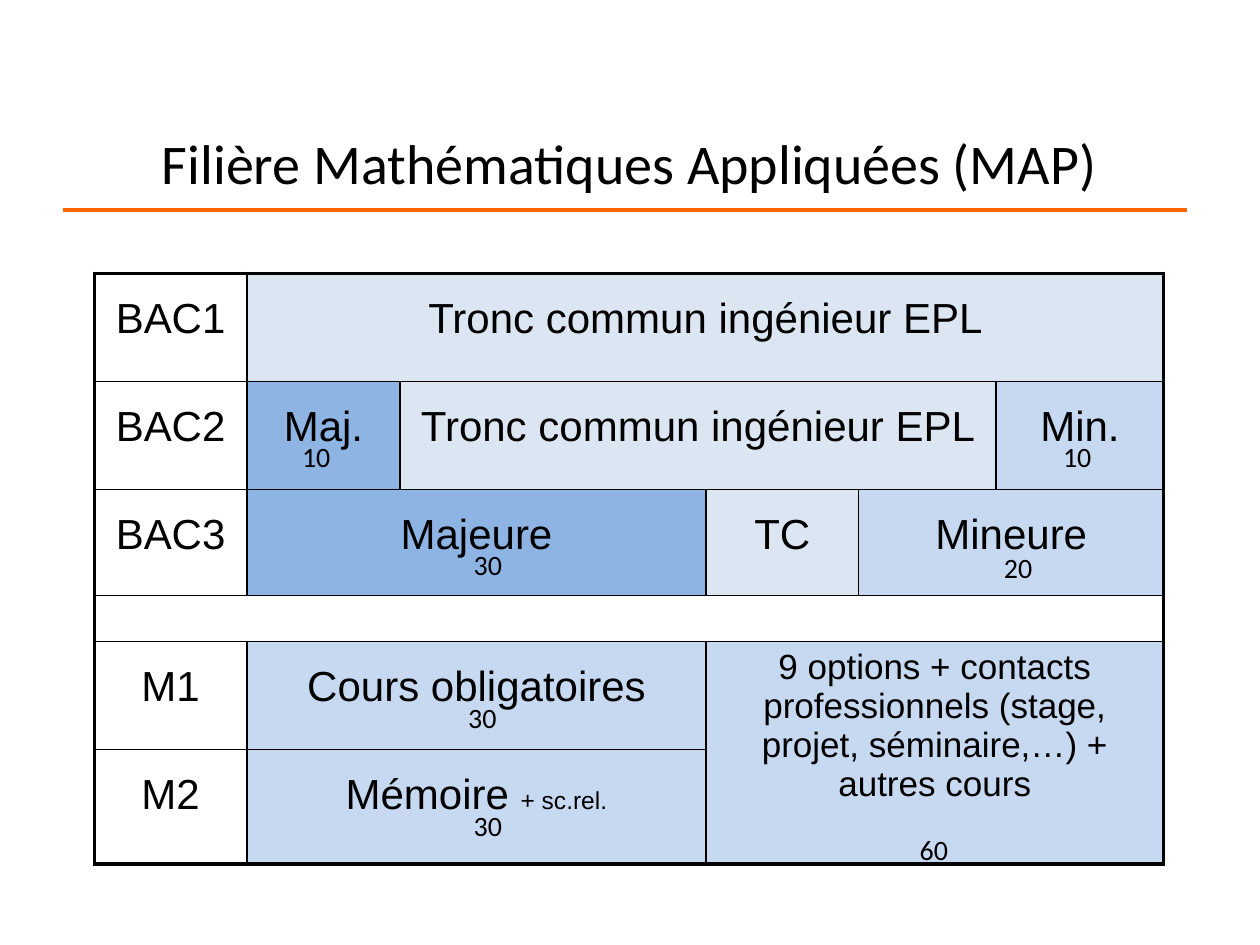
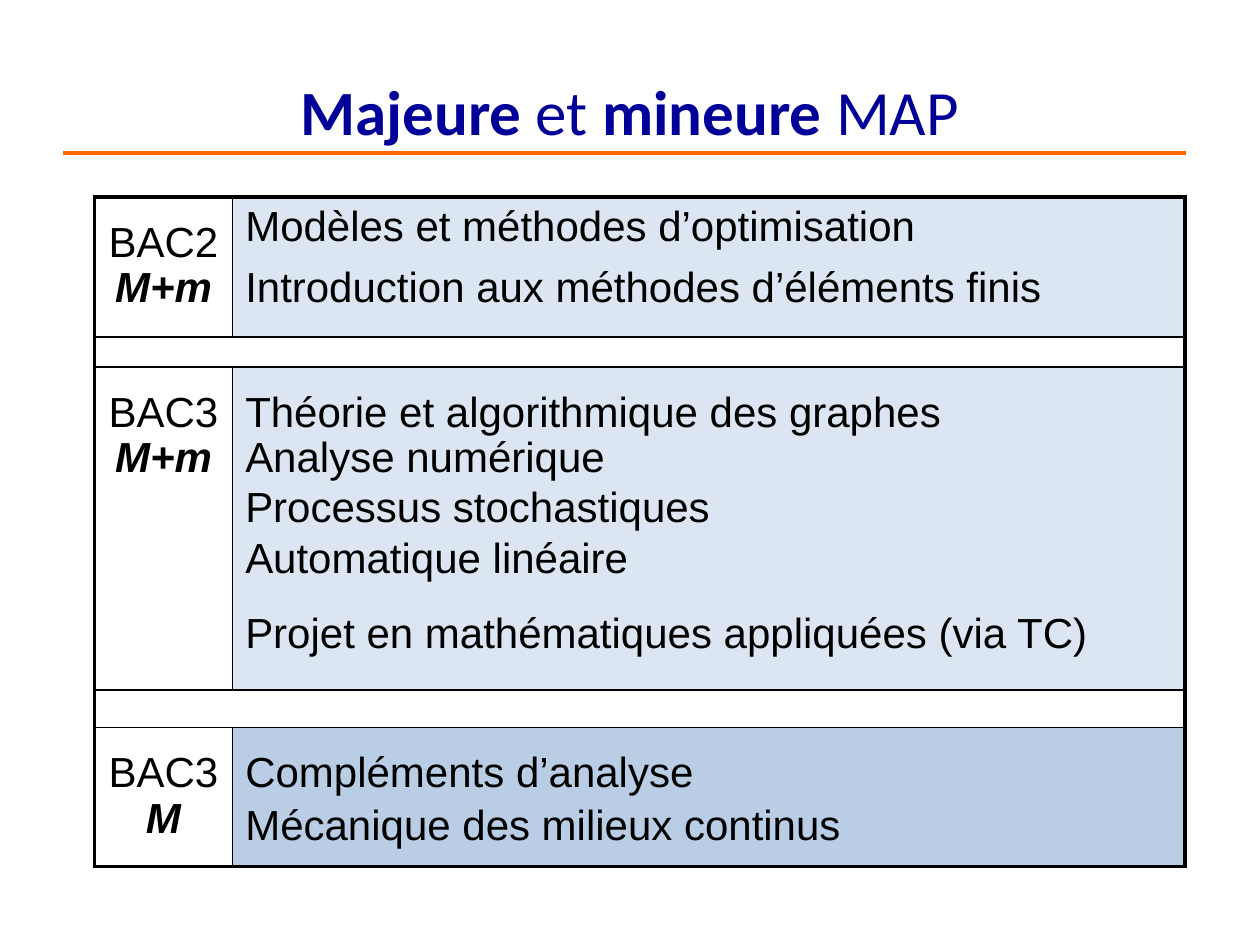
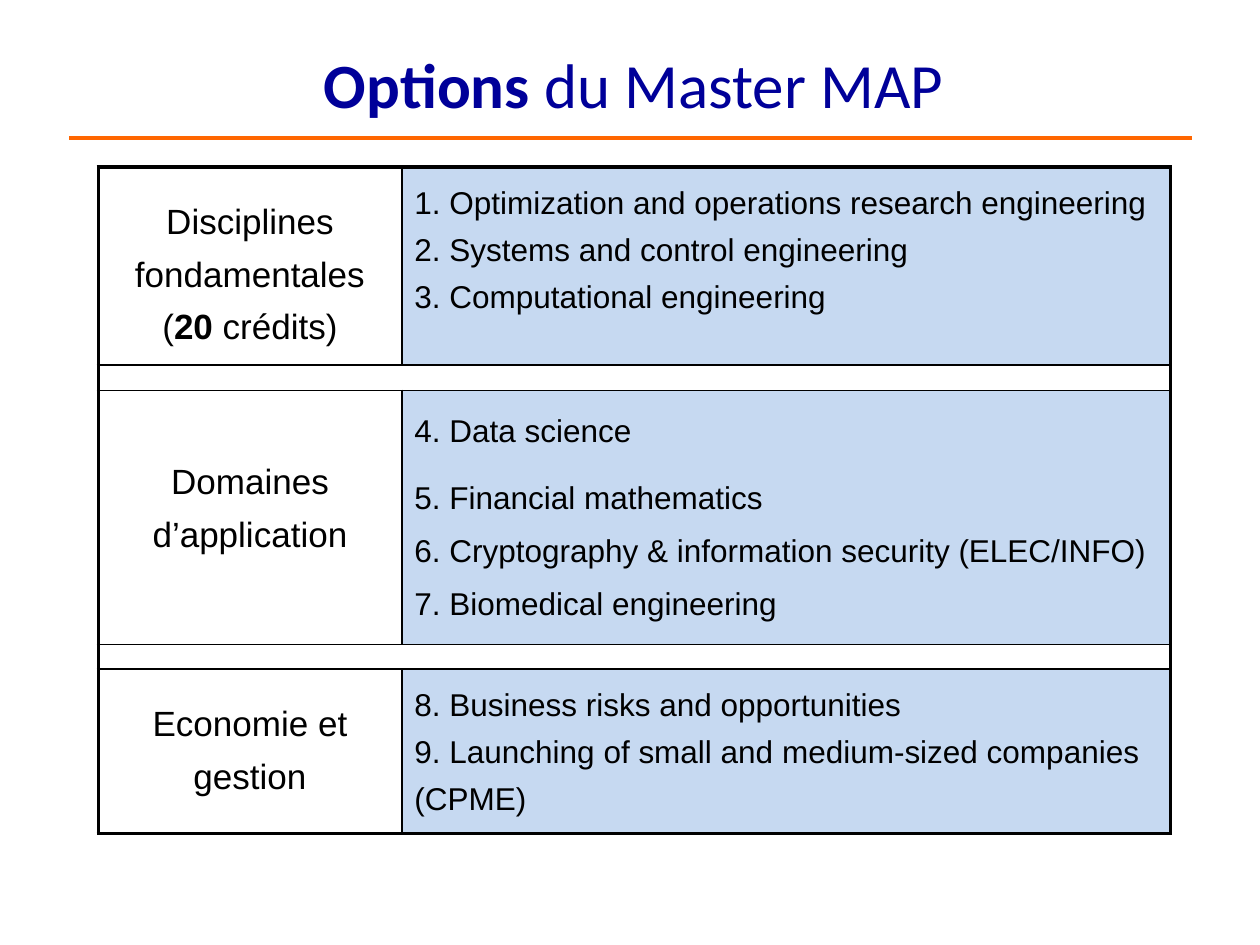
from lxml.etree import SubElement as Sub
from pptx import Presentation
from pptx.dml.color import RGBColor as Rgb
from pptx.enum.shapes import MSO_CONNECTOR as Link
from pptx.enum.text import MSO_ANCHOR as Anchor, PP_ALIGN as Align
from pptx.oxml.ns import qn
from pptx.util import Cm, Pt

BLACK, WHITE, NAVY, ORANGE = "000000", "FFFFFF", "000099", "FF6600"
PALE, SOFT, MID, DEEP = "DCE6F2", "C6D9F1", "B9CDE5", "8EB4E3"
THICK, THIN = Pt(2.25), Pt(1)


def hue(code):
    return Rgb.from_string(code)


def write(frame, text, size=24, face="Arial", color=BLACK, align=Align.CENTER,
          space=1.34, gap=8, strong={"bold": True}):
    frame.word_wrap = True
    para = frame.add_paragraph() if frame.text else frame.paragraphs[0]
    para.alignment, para.line_spacing, para.space_before = align, space, Pt(gap)
    for spot, part in enumerate(text.split("*")):
        for row, line in enumerate(part.split("\n")):
            if row:
                para.add_line_break()
            if not line:
                continue
            run = para.add_run()
            run.text = line
            font = run.font
            font.name, font.size, font.color.rgb = face, Pt(size), hue(color)
            if spot % 2:
                for name, value in strong.items():
                    setattr(font, name, value)


year = {}
mark = {"space": 0.6, "strong": {"bold": True, "italic": True}}
left = {"align": Align.LEFT}
flat = {**left, "space": 1.0}
near = {**left, "space": 0.8}
tight = {**left, "space": 0.6}
item = {**left, "size": 18}
wide = {**item, "space": 1.5}
area = {"size": 20, "gap": 0}
note = {"strong": {"size": Pt(14)}}
tronc = "Tronc commun ingénieur EPL"

decks = [
    {
        "title": "Filière Mathématiques Appliquées (MAP)",
        "look": {"size": 32, "color": BLACK},
        "head": (1.9, 2.46, 21.59, 1.63), "rule": (1.27, 4.24, 23.93),
        "spot": (1.9, 5.51),
        "cols": [3.08, 3.08, 6.17, 3.08, 2.77, 3.38],
        "rows": [2.18, 2.18, 2.13, 0.93, 2.18, 2.31],
        "cells": [
            (0, 0, 1, 1, WHITE, [("BAC1", year)]),
            (0, 1, 1, 5, PALE, [(tronc, year)]),
            (1, 0, 1, 1, WHITE, [("BAC2", year)]),
            (1, 1, 1, 1, DEEP, [("Maj.", year)]),
            (1, 2, 1, 3, PALE, [(tronc, year)]),
            (1, 5, 1, 1, SOFT, [("Min.", year)]),
            (2, 0, 1, 1, WHITE, [("BAC3", year)]),
            (2, 1, 1, 2, DEEP, [("Majeure", year)]),
            (2, 3, 1, 1, PALE, [("TC", year)]),
            (2, 4, 1, 2, SOFT, [("Mineure", year)]),
            (3, 0, 1, 6, WHITE, []),
            (4, 0, 1, 1, WHITE, [("M1", year)]),
            (4, 1, 1, 2, SOFT, [("Cours obligatoires", year)]),
            (4, 3, 2, 3, SOFT, [
                ("9 options + contacts professionnels (stage, projet, "
                 "séminaire,…) + autres cours", {"size": 20, "space": 1.0})]),
            (5, 0, 1, 1, WHITE, [("M2", year)]),
            (5, 1, 1, 2, SOFT, [("Mémoire *+ sc.rel.*", note)]),
        ],
        "marks": [("10", 5.84, 8.74), ("10", 21.18, 8.74), ("30", 9.3, 10.92),
                  ("20", 19.99, 10.97), ("60", 18.29, 16.66),
                  ("30", 9.19, 14), ("30", 9.3, 16.18)],
    },
    {
        "title": "*Majeure* et *mineure* MAP",
        "look": {"size": 36, "color": NAVY},
        "head": (1.9, 1.32, 21.59, 1.8), "rule": (1.27, 3.09, 23.91),
        "spot": (1.9, 3.97),
        "cols": [2.79, 19.2],
        "rows": [2.82, 0.61, 6.51, 0.76, 2.8],
        "cells": [
            (0, 0, 1, 1, WHITE, [("BAC2", year), ("*M+m*", mark)]),
            (0, 1, 1, 1, PALE, [
                ("Modèles et méthodes d’optimisation", flat),
                ("Introduction aux méthodes d’éléments finis", flat)]),
            (1, 0, 1, 2, WHITE, []),
            (2, 0, 1, 1, WHITE, [("BAC3", year), ("*M+m*", mark)]),
            (2, 1, 1, 1, PALE, [
                ("Théorie et algorithmique des graphes", left),
                ("Analyse numérique", tight),
                ("Processus stochastiques", near),
                ("Automatique linéaire", near),
                ("Projet en mathématiques appliquées (via TC)", left)]),
            (3, 0, 1, 2, WHITE, []),
            (4, 0, 1, 1, WHITE, [("BAC3", year), ("*M*", mark)]),
            (4, 1, 1, 1, MID, [
                ("Compléments d’analyse", left),
                ("Mécanique des milieux continus", near)]),
        ],
        "marks": [],
    },
    {
        "title": "*Options* du Master MAP",
        "look": {"size": 36, "color": NAVY},
        "head": (1.98, 0.79, 21.59, 1.8), "rule": (1.4, 2.78, 24.03),
        "spot": (1.98, 3.37),
        "cols": [6.12, 15.5],
        "rows": [3.99, 0.51, 5.12, 0.5, 3.31],
        "tops": {(0, 0): 0.46, (2, 0): 1.2, (4, 0): 0.46},
        "cells": [
            (0, 0, 1, 1, WHITE, [
                ("Disciplines fondamentales", area), ("(*20* crédits)", area)]),
            (0, 1, 1, 1, SOFT, [
                ("1. Optimization and operations research engineering\n"
                 "2. Systems and control engineering\n"
                 "3. Computational engineering", item)]),
            (1, 0, 1, 2, WHITE, []),
            (2, 0, 1, 1, WHITE, [("Domaines d’application", area)]),
            (2, 1, 1, 1, SOFT, [
                ("4. Data science", wide),
                ("5. Financial mathematics\n"
                 "6. Cryptography & information security (ELEC/INFO)\n"
                 "7. Biomedical engineering", wide)]),
            (3, 0, 1, 2, WHITE, []),
            (4, 0, 1, 1, WHITE, [("Economie et gestion", area)]),
            (4, 1, 1, 1, SOFT, [
                ("8. Business risks and opportunities\n"
                 "9. Launching of small and medium-sized companies (CPME)",
                 item)]),
        ],
        "marks": [],
    },
]

prs = Presentation()
prs.slide_width, prs.slide_height = Cm(25.4), Cm(19.05)

for deck in decks:
    slide = prs.slides.add_slide(prs.slide_layouts[6])
    shapes = slide.shapes

    head = shapes.add_textbox(*map(Cm, deck["head"])).text_frame
    head.vertical_anchor = Anchor.MIDDLE
    write(head, deck["title"], face="Calibri", space=1.0, gap=0, **deck["look"])

    start, level, end = map(Cm, deck["rule"])
    rule = shapes.add_connector(Link.STRAIGHT, start, level, end, level)
    rule.line.color.rgb, rule.line.width = hue(ORANGE), THICK
    Sub(rule._element.spPr, qn("a:effectLst"))

    cols, rows = deck["cols"], deck["rows"]
    x, y = deck["spot"]
    grid = shapes.add_table(len(rows), len(cols), Cm(x), Cm(y),
                            Cm(sum(cols)), Cm(sum(rows))).table
    grid.first_row = grid.horz_banding = False
    for col, width in zip(grid.columns, cols):
        col.width = Cm(width)
    for row, height in zip(grid.rows, rows):
        row.height = Cm(height)

    for r, c, down, over, fill, paras in deck["cells"]:
        cell = grid.cell(r, c)
        if down * over > 1:
            cell.merge(grid.cell(r + down - 1, c + over - 1))
        props = cell._tc.get_or_add_tcPr()
        edges = {"L": c == 0, "R": c + over == len(cols),
                 "T": r == 0, "B": r + down == len(rows)}
        for side, outer in edges.items():
            line = Sub(props, qn(f"a:ln{side}"), w=str(int(THICK if outer else THIN)))
            Sub(Sub(line, qn("a:solidFill")), qn("a:srgbClr"), val=BLACK)
        cell.fill.solid()
        cell.fill.fore_color.rgb = hue(fill)
        if (r, c) in deck.get("tops", {}):
            cell.margin_top = Cm(deck["tops"][r, c])
        for text, form in paras:
            write(cell.text_frame, text, **form)
        if not paras:
            cell.margin_top = cell.margin_bottom = 0
            Sub(cell.text_frame.paragraphs[0]._p, qn("a:endParaRPr"), sz="600")

    for text, x, y in deck["marks"]:
        box = shapes.add_textbox(Cm(x), Cm(y), Cm(1.2), Cm(0.94))
        write(box.text_frame, text, size=16, face="Calibri",
              align=Align.LEFT, space=1.0, gap=0)

prs.save("out.pptx")
